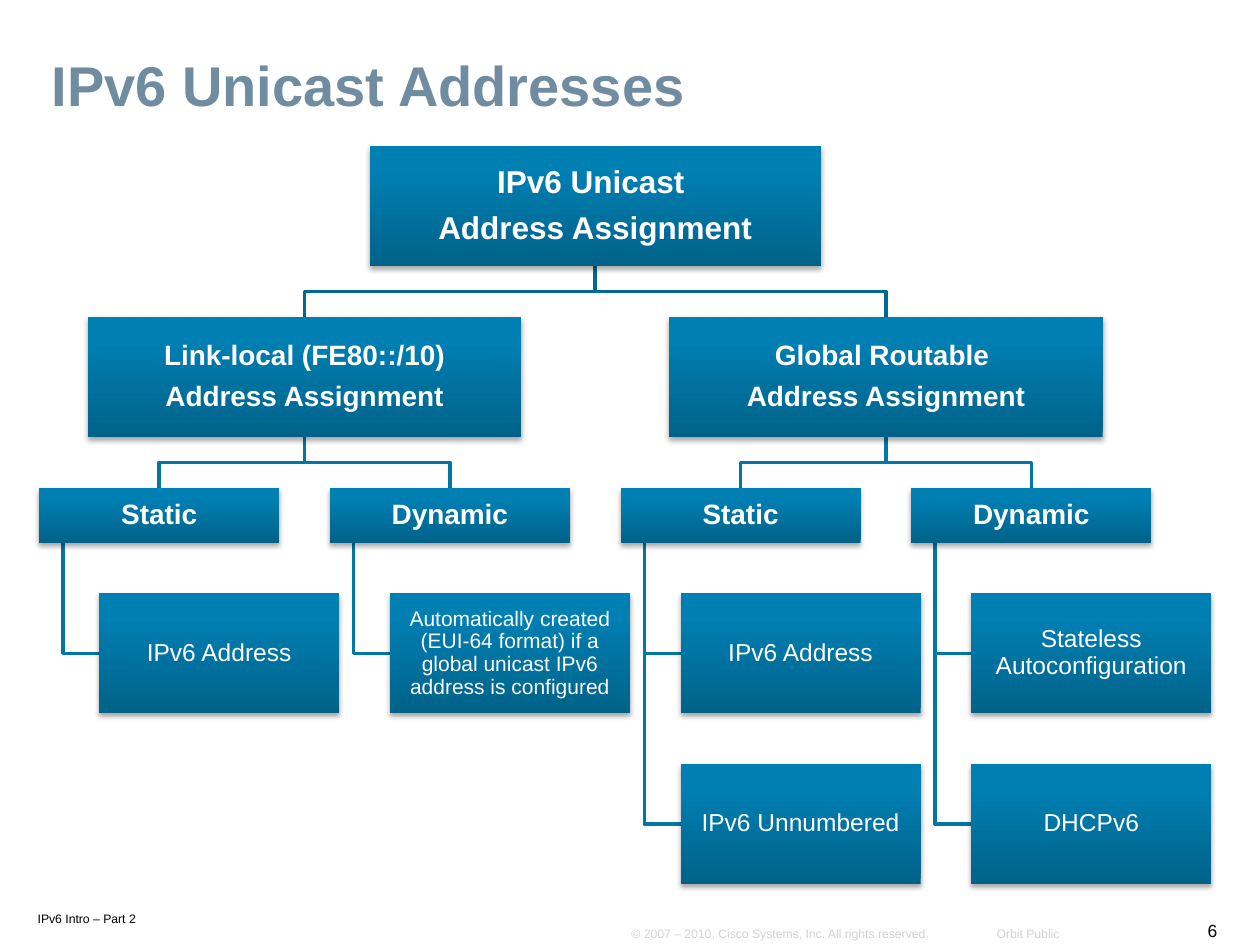
from dataclasses import dataclass

from lxml.etree import fromstring
from pptx import Presentation
from pptx.dml.color import RGBColor
from pptx.enum.shapes import MSO_SHAPE
from pptx.enum.text import MSO_ANCHOR, MSO_AUTO_SIZE, PP_ALIGN
from pptx.oxml.ns import qn
from pptx.slide import Slide
from pptx.text.text import TextFrame
from pptx.util import Cm, Pt

FONT = "Arial"
DRAWING = 'xmlns:a="http://schemas.openxmlformats.org/drawingml/2006/main"'
GRADIENT = f"""<a:gradFill {DRAWING} rotWithShape="1"><a:gsLst>
<a:gs pos="0"><a:srgbClr val="006289"/></a:gs>
<a:gs pos="80000"><a:srgbClr val="007FB2"/></a:gs>
<a:gs pos="100000"><a:srgbClr val="0080B3"/></a:gs>
</a:gsLst><a:lin ang="16200000" scaled="0"/></a:gradFill>"""
SHADOW = f"""<a:effectLst {DRAWING}>
<a:outerShdw blurRad="39370" dist="22860" dir="5400000" rotWithShape="0">
<a:srgbClr val="000000"><a:alpha val="35000"/></a:srgbClr>
</a:outerShdw></a:effectLst>"""

# All chart measures are in centimetres.
COLUMN_LEFT, COLUMN_STEP = 0.79, 5.86
BOX_WIDTH, BRANCH_WIDTH, ROOT_WIDTH = 4.84, 8.74, 9.1
BOX_HEIGHT, METHOD_HEIGHT, GAP = 2.42, 1.11, 1.02
TRUNK_INDENT, LEAF_INDENT = 0.48, 1.21
ROOT_TOP = 2.95
BRANCH_TOP = ROOT_TOP + BOX_HEIGHT + GAP
METHOD_TOP = BRANCH_TOP + BOX_HEIGHT + GAP
LEAF_TOP = METHOD_TOP + METHOD_HEIGHT + GAP


@dataclass
class Leaf:
    text: str
    size: int = 14


@dataclass
class Method:
    text: str
    leaves: list[Leaf]


@dataclass
class Branch:
    text: str
    methods: list[Method]


@dataclass
class Footer:
    text: str
    left: float
    top: float
    width: float
    height: float
    size: int = 7
    color: str = "D3D3D3"
    align: PP_ALIGN = PP_ALIGN.LEFT
    wrap: bool = False


BRANCHES = [
    Branch("Link-local (FE80::/10)\nAddress Assignment", [
        Method("Static", [Leaf("IPv6 Address")]),
        Method("Dynamic", [Leaf("Automatically created (EUI-64 format) if a global "
                                "unicast IPv6 address is configured", 12)]),
    ]),
    Branch("Global Routable \nAddress Assignment", [
        Method("Static", [Leaf("IPv6 Address"), Leaf("IPv6 Unnumbered")]),
        Method("Dynamic", [Leaf("Stateless Autoconfiguration"), Leaf("DHCPv6")]),
    ]),
]
FOOTERS = [
    Footer("IPv6 Intro – Part 2", 0.53, 18.24, 2.67, 0.53, color="000000", wrap=True),
    Footer("6", 23.88, 18.42, 0.89, 0.66, 10, "000000", PP_ALIGN.RIGHT),
    Footer("© 2007 – 2010, Cisco Systems, Inc. All rights reserved.",
           12.5, 18.54, 6.53, 0.53),
    Footer("Orbit Public", 19.79, 18.54, 1.8, 0.53, align=PP_ALIGN.RIGHT),
]


def rgb(value: str) -> RGBColor:
    return RGBColor.from_string(value)


def format_text(frame: TextFrame, size: int, color: str, bold: bool = False,
                align: PP_ALIGN = PP_ALIGN.LEFT) -> None:
    for paragraph in frame.paragraphs:
        paragraph.alignment = align
        for run in paragraph.runs:
            run.font.name = FONT
            run.font.size = Pt(size)
            run.font.bold = bold
            run.font.color.rgb = rgb(color)


def add_box(slide: Slide, text: str, left: float, top: float, width: float,
            height: float, size: int, bold: bool = True) -> None:
    shape = slide.shapes.add_shape(
        MSO_SHAPE.RECTANGLE, Cm(left), Cm(top), Cm(width), Cm(height))
    shape.line.fill.background()
    properties = shape.element.spPr
    properties.find(qn("a:ln")).addprevious(fromstring(GRADIENT))
    properties.append(fromstring(SHADOW))
    frame = shape.text_frame
    frame.margin_left = frame.margin_right = Cm(0.03)
    frame.margin_top = frame.margin_bottom = Cm(0.03)
    frame.vertical_anchor = MSO_ANCHOR.MIDDLE
    frame.word_wrap = True
    frame.text = text
    format_text(frame, size, "FFFFFF", bold, PP_ALIGN.CENTER)
    for paragraph in frame.paragraphs:
        paragraph.line_spacing = 0.9
        paragraph.space_after = Pt(0.4 * size)


def add_path(slide: Slide, points: list[tuple[float, float]],
             color: str = "0177A6") -> None:
    """Draw an open angled line through the points."""
    start, *rest = [(Cm(x), Cm(y)) for x, y in points]
    builder = slide.shapes.build_freeform(*start)
    builder.add_line_segments(rest, close=False)
    shape = builder.convert_to_shape()
    shape.fill.background()
    shape.line.color.rgb = rgb(color)
    shape.line.width = Pt(2)
    shape.shadow.inherit = False


def add_fork(slide: Slide, parent_x: float, child_x: float, child_top: float,
             color: str = "0177A6") -> None:
    """Join a parent's bottom centre to the top centre of a child."""
    middle = child_top - GAP / 2
    add_path(slide, [(parent_x, child_top - GAP), (parent_x, middle),
                     (child_x, middle), (child_x, child_top)], color)


def add_method(slide: Slide, method: Method, left: float) -> None:
    """Draw a method heading with its leaves hanging from a trunk line."""
    trunk, leaf_left = left + TRUNK_INDENT, left + LEAF_INDENT
    for row, leaf in enumerate(method.leaves):
        top = LEAF_TOP + row * (BOX_HEIGHT + GAP)
        middle = top + BOX_HEIGHT / 2
        add_path(slide, [(trunk, METHOD_TOP + METHOD_HEIGHT), (trunk, middle),
                         (leaf_left, middle)])
        add_box(slide, leaf.text, leaf_left, top, BOX_WIDTH, BOX_HEIGHT,
                leaf.size, bold=False)
    add_box(slide, method.text, left, METHOD_TOP, BOX_WIDTH, METHOD_HEIGHT, 16)


def add_hierarchy(slide: Slide) -> None:
    first_center = COLUMN_LEFT + BOX_WIDTH / 2
    root_center = first_center + 1.5 * COLUMN_STEP
    for index, branch in enumerate(BRANCHES):
        center = first_center + (2 * index + 0.5) * COLUMN_STEP
        add_fork(slide, root_center, center, BRANCH_TOP, "016993")
        for offset, method in enumerate(branch.methods):
            left = COLUMN_LEFT + (2 * index + offset) * COLUMN_STEP
            add_fork(slide, center, left + BOX_WIDTH / 2, METHOD_TOP)
            add_method(slide, method, left)
        add_box(slide, branch.text, center - BRANCH_WIDTH / 2, BRANCH_TOP,
                BRANCH_WIDTH, BOX_HEIGHT, 16)
    add_box(slide, "IPv6 Unicast \nAddress Assignment", root_center - ROOT_WIDTH / 2,
            ROOT_TOP, ROOT_WIDTH, BOX_HEIGHT, 18)


def add_title(slide: Slide) -> None:
    title = slide.shapes.title
    title.left, title.top, title.width, title.height = Cm(0.79), Cm(1.02), Cm(23.67), Cm(1.52)
    frame = title.text_frame
    frame.text = "IPv6 Unicast Addresses"
    frame.auto_size = MSO_AUTO_SIZE.NONE
    frame.vertical_anchor = MSO_ANCHOR.MIDDLE
    frame.paragraphs[0].line_spacing = 0.9
    format_text(frame, 32, "708CA1", bold=True)


def add_footer(slide: Slide, footer: Footer) -> None:
    box = slide.shapes.add_textbox(
        Cm(footer.left), Cm(footer.top), Cm(footer.width), Cm(footer.height))
    frame = box.text_frame
    frame.margin_left = frame.margin_right = Cm(0.23)
    frame.margin_top = frame.margin_bottom = Cm(0.1)
    frame.vertical_anchor = MSO_ANCHOR.BOTTOM
    frame.word_wrap = footer.wrap
    frame.text = footer.text
    format_text(frame, footer.size, footer.color, align=footer.align)


def main() -> None:
    presentation = Presentation()
    presentation.slide_width, presentation.slide_height = Cm(25.4), Cm(19.05)
    slide = presentation.slides.add_slide(presentation.slide_layouts[5])
    add_title(slide)
    add_hierarchy(slide)
    for footer in FOOTERS:
        add_footer(slide, footer)
    presentation.save("out.pptx")


if __name__ == "__main__":
    main()
